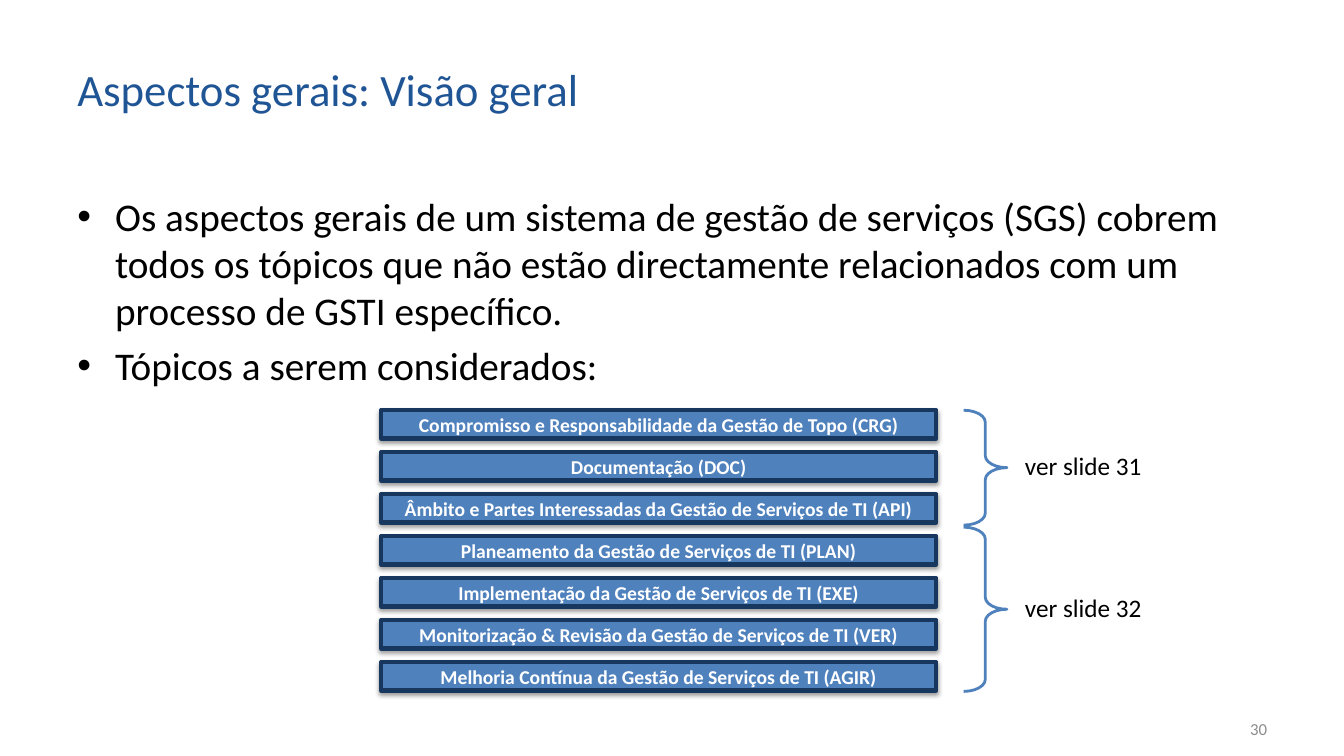
"""Build the slide on the general aspects of a service management system."""
from dataclasses import dataclass

from lxml.etree import SubElement
from pptx import Presentation
from pptx.dml.color import RGBColor as Rgb
from pptx.enum.shapes import MSO_SHAPE as Kind
from pptx.enum.text import MSO_ANCHOR as Anchor, MSO_AUTO_SIZE as Fit, PP_ALIGN as Align
from pptx.oxml.ns import qn
from pptx.util import Emu, Inches, Pt

COLS, ROWS = 160, 90
WIDE, HIGH = Inches(13.333), Inches(7.5)


@dataclass(frozen=True)
class Theme:
    font: str = "Calibri"
    title: str = "205595"
    text: str = "000000"
    page: str = "8C8C8C"
    bar: str = "4F81BD"
    edge: str = "17375E"
    white: str = "FFFFFF"
    head: int = 32
    body: int = 28
    note: int = 18
    small: int = 14
    tiny: int = 12


@dataclass(frozen=True)
class Box:
    col: float
    row: float
    cols: float
    rows: float

    def place(self) -> tuple[Emu, Emu, Emu, Emu]:
        x, y = WIDE / COLS, HIGH / ROWS
        return (Emu(round(self.col * x)), Emu(round(self.row * y)),
                Emu(round(self.cols * x)), Emu(round(self.rows * y)))


@dataclass(frozen=True)
class Group:
    label: str
    brace: Box
    note: Box


THEME = Theme()
POINTS = (
    "Os aspectos gerais de um sistema de gestão de serviços (SGS) cobrem todos os "
    "tópicos que não estão directamente relacionados com um processo de GSTI específico.",
    "Tópicos a serem considerados:",
)
TOPICS = (
    "Compromisso e Responsabilidade da Gestão de Topo (CRG)",
    "Documentação (DOC)",
    "Âmbito e Partes Interessadas da Gestão de Serviços de TI (API)",
    "Planeamento da Gestão de Serviços de TI (PLAN)",
    "Implementação da Gestão de Serviços de TI (EXE)",
    "Monitorização & Revisão da Gestão de Serviços de TI (VER)",
    "Melhoria Contínua da Gestão de Serviços de TI (AGIR)",
)
TOP, PITCH = 48.84, 5
GROUPS = (
    Group("ver slide 31", Box(114.72, TOP, 5.16, 13.68), Box(120.84, 53.04, 25.56, 4.8)),
    Group("ver slide 32", Box(114.72, 62.76, 5.16, 19.56), Box(120.84, 69.96, 19.44, 4.8)),
)


def move(shape, box: Box) -> None:
    shape.left, shape.top, shape.width, shape.height = box.place()


def write(shape, lines: tuple[str, ...], size: int, color: str,
          align: Align = Align.LEFT, anchor: Anchor = Anchor.TOP, bold: bool = False) -> None:
    frame = shape.text_frame
    frame.text = "\n".join(lines)
    frame.word_wrap = True
    frame.auto_size = Fit.NONE
    frame.vertical_anchor = anchor
    for i, para in enumerate(frame.paragraphs):
        para.alignment = align
        para.space_before = Pt(0.2 * size if i else 0)
        font = para.font
        font.name, font.size, font.bold = THEME.font, Pt(size), bold
        font.color.rgb = Rgb.from_string(color)


def stroke(shape, color: str, width: float) -> None:
    shape.line.color.rgb = Rgb.from_string(color)
    shape.line.width = Pt(width)


def shade(shape) -> None:
    shape.shadow.inherit = False
    glow = SubElement(shape._element.spPr.find(qn("a:effectLst")), qn("a:outerShdw"),
                      blurRad=str(Pt(3.1)), dist=str(Pt(1.6)), dir="5400000", rotWithShape="0")
    tint = SubElement(glow, qn("a:srgbClr"), val="000000")
    SubElement(tint, qn("a:alpha"), val="38000")


def draw_bar(shapes, label: str, box: Box) -> None:
    bar = shapes.add_shape(Kind.RECTANGLE, *box.place())
    bar.fill.solid()
    bar.fill.fore_color.rgb = Rgb.from_string(THEME.bar)
    stroke(bar, THEME.edge, 3)
    shade(bar)
    write(bar, (label,), THEME.small, THEME.white, Align.CENTER, Anchor.MIDDLE, True)


def draw_group(shapes, group: Group) -> None:
    brace = shapes.add_shape(Kind.RIGHT_BRACE, *group.brace.place())
    brace.adjustments[0] = 0.277
    brace.fill.background()
    brace.shadow.inherit = False
    stroke(brace, THEME.bar, 2)
    note = shapes.add_textbox(*group.note.place())
    write(note, (group.label,), THEME.note, THEME.text)


def main() -> None:
    deck = Presentation()
    deck.slide_width, deck.slide_height = WIDE, HIGH
    slide = deck.slides.add_slide(deck.slide_layouts[1])
    shapes = slide.shapes
    title, body = shapes.title, slide.placeholders[1]
    move(title, Box(8, 3.6, 119, 13.8))
    write(title, ("Aspectos gerais: Visão geral",), THEME.head, THEME.title,
          anchor=Anchor.MIDDLE)
    move(body, Box(8, 22.32, 144, 60.72))
    write(body, POINTS, THEME.body, THEME.text)
    page = shapes.add_textbox(*Box(114.72, 84.36, 37.32, 4.8).place())
    write(page, ("30",), THEME.tiny, THEME.page, Align.RIGHT, Anchor.MIDDLE)
    for i, topic in enumerate(TOPICS):
        draw_bar(shapes, topic, Box(45.36, TOP + i * PITCH, 66.12, 3.36))
    for group in GROUPS:
        draw_group(shapes, group)
    deck.save("out.pptx")


if __name__ == "__main__":
    main()
